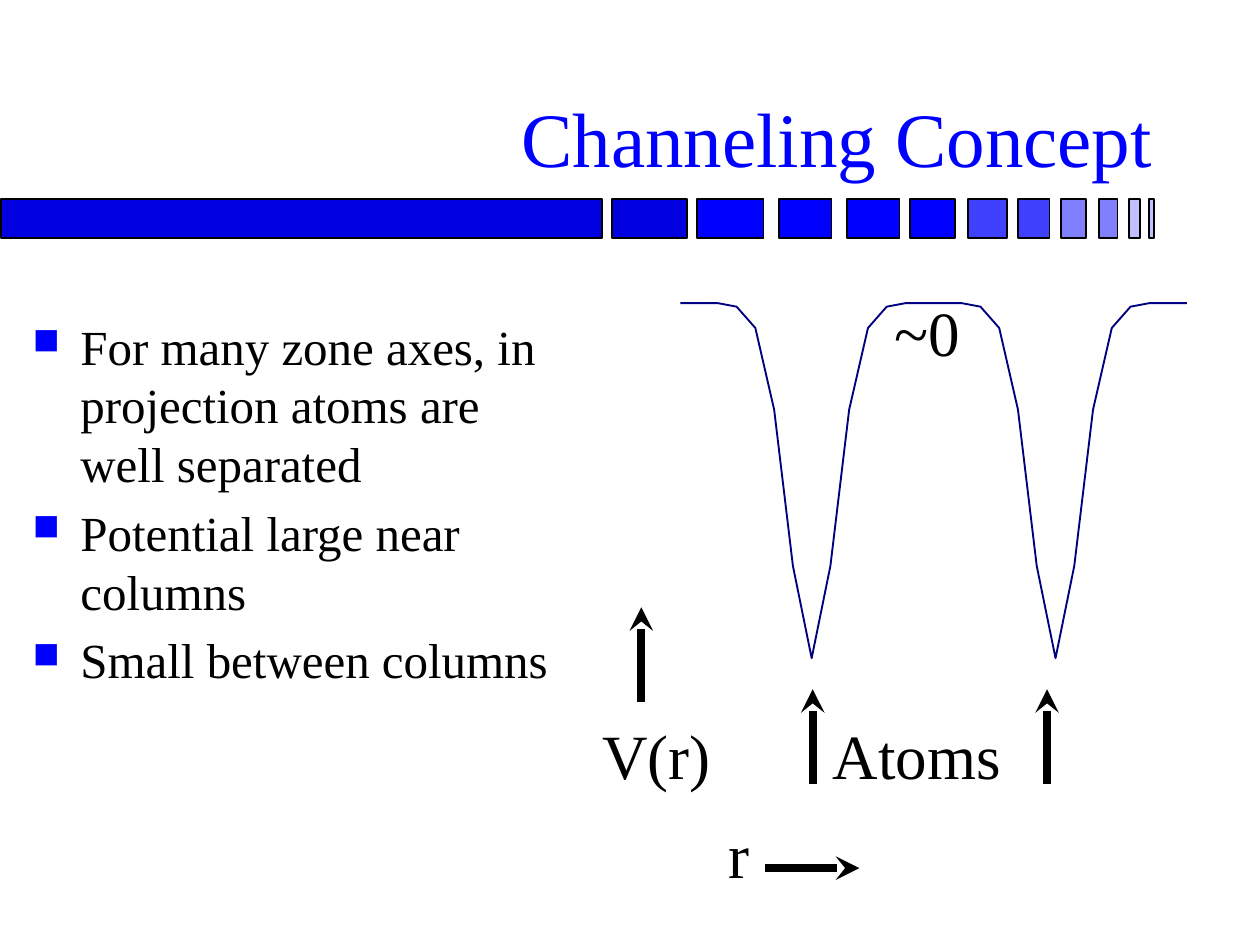
from lxml import etree
from pptx import Presentation
from pptx.chart.data import XyChartData
from pptx.dml.color import RGBColor
from pptx.enum.chart import XL_CHART_TYPE, XL_MARKER_STYLE
from pptx.enum.shapes import MSO_CONNECTOR, MSO_SHAPE
from pptx.enum.text import MSO_ANCHOR, MSO_AUTO_SIZE, PP_ALIGN
from pptx.oxml import parse_xml
from pptx.oxml.ns import nsdecls, qn
from pptx.util import Inches, Pt

SERIF = "Times New Roman"
BLACK, BLUE, NAVY, WHITE = "000000", "0000FF", "000080", "FFFFFF"


def set_color(color_format, color):
    """Fill a solid fill or font colour from a hex string."""
    color_format.rgb = RGBColor.from_string(color)


def set_fill(fill, color):
    fill.solid()
    set_color(fill.fore_color, color)


def add_bullet(paragraph):
    """Give the paragraph a blue square bullet with a hanging indent."""
    properties = paragraph._p.get_or_add_pPr()
    properties.set("marL", str(Inches(0.38)))
    properties.set("indent", str(Inches(-0.38)))
    color = etree.SubElement(properties, qn("a:buClr"))
    etree.SubElement(color, qn("a:srgbClr"), val=BLUE)
    etree.SubElement(properties, qn("a:buSzPct"), val="75000")
    etree.SubElement(properties, qn("a:buChar"), char="■")


def add_tab_stop(paragraph, position):
    tabs = etree.SubElement(paragraph._p.get_or_add_pPr(), qn("a:tabLst"))
    etree.SubElement(tabs, qn("a:tab"), pos=str(Inches(position)), algn="l")


def write_text(frame, text, size=36, color=BLACK, align=PP_ALIGN.LEFT,
               anchor=MSO_ANCHOR.TOP, bullets=False, space=0, tab=None):
    """Write one paragraph for each line of text."""
    frame.word_wrap = True
    frame.auto_size = MSO_AUTO_SIZE.NONE
    frame.vertical_anchor = anchor
    for index, line in enumerate(text.split("\n")):
        paragraph = frame.add_paragraph() if index else frame.paragraphs[0]
        paragraph.alignment = align
        if bullets:
            add_bullet(paragraph)
        if tab:
            add_tab_stop(paragraph, tab)
        if index:
            paragraph.space_before = Pt(space)
        run = paragraph.add_run()
        run.text = line
        run.font.name = SERIF
        run.font.size = Pt(size)
        set_color(run.font.color, color)


def add_text(slide, box, text, **text_format):
    shape = slide.shapes.add_textbox(*map(Inches, box))
    write_text(shape.text_frame, text, **text_format)


def add_title(slide, box, text):
    title = slide.shapes.title
    title.left, title.top, title.width, title.height = map(Inches, box)
    write_text(title.text_frame, text, size=44, color=BLUE,
               align=PP_ALIGN.RIGHT, anchor=MSO_ANCHOR.BOTTOM)


def add_fading_bar(slide, top, height):
    """Draw the row of blocks that shrink and fade to the right."""
    blocks = [
        (0.01, 4.77, "0000E0"), (4.86, 0.59, "0000E0"),
        (5.53, 0.53, BLUE), (6.18, 0.42, BLUE),
        (6.72, 0.42, BLUE), (7.22, 0.36, BLUE),
        (7.68, 0.31, "4040FF"), (8.08, 0.25, "4040FF"),
        (8.42, 0.2, "8080FF"), (8.72, 0.15, "8080FF"),
        (8.96, 0.09, "C0C0FF"), (9.12, 0.04, "C0C0FF"),
    ]
    for left, width, color in blocks:
        box = map(Inches, (left, top, width, height))
        block = slide.shapes.add_shape(MSO_SHAPE.RECTANGLE, *box)
        block.shadow.inherit = False
        set_fill(block.fill, color)
        set_fill(block.line.fill, BLACK)
        block.line.width = Pt(1)


def add_potential_chart(slide, box):
    """Plot two identical potential wells along r."""
    slope = [-1, -7, -30, -74]
    well = slope + [-100] + slope[::-1]
    potential = [0] * 3 + well + [0] * 4 + well + [0] * 3
    data = XyChartData()
    points = data.add_series("Series 1")
    for index, value in enumerate(potential):
        points.add_data_point(round(-1 + index / 10, 1), value)
    chart = slide.shapes.add_chart(
        XL_CHART_TYPE.XY_SCATTER_SMOOTH_NO_MARKERS,
        *map(Inches, box), data).chart

    chart.has_legend = False
    chart.has_title = False
    chart.font.name = "Arial"
    chart.font.size = Pt(12.9)
    set_color(chart.font.color, BLACK)
    chart.plots[0].vary_by_categories = False
    series = chart.plots[0].series[0]
    series.smooth = True
    series.marker.style = XL_MARKER_STYLE.NONE
    set_fill(series.format.line.fill, NAVY)
    series.format.line.width = Pt(1.08)

    # Hidden axes with fixed ranges
    for axis, low, high in ((chart.category_axis, -1.5, 2),
                            (chart.value_axis, -120, 0)):
        axis.minimum_scale, axis.maximum_scale = low, high
        axis.has_major_gridlines = False
        axis.visible = False

    # Plot area position and white background
    plot_area = chart._chartSpace.chart.plotArea
    for layout in plot_area.findall(qn("c:layout")):
        plot_area.remove(layout)
    layout = etree.Element(qn("c:layout"))
    manual = etree.SubElement(layout, qn("c:manualLayout"))
    for tag, value in (("layoutTarget", "inner"), ("xMode", "edge"),
                       ("yMode", "edge"), ("x", "0.023"), ("y", "0.035"),
                       ("w", "0.958"), ("h", "0.937")):
        etree.SubElement(manual, qn(f"c:{tag}"), val=value)
    plot_area.insert(0, layout)
    chart._chartSpace.chart.addnext(parse_xml(
        f'<c:spPr {nsdecls("c", "a")}><a:solidFill><a:srgbClr val="{WHITE}"/>'
        '</a:solidFill><a:ln><a:noFill/></a:ln></c:spPr>'))


def add_arrow(slide, start, end):
    arrow = slide.shapes.add_connector(
        MSO_CONNECTOR.STRAIGHT, *map(Inches, start + end))
    set_fill(arrow.line.fill, BLACK)
    arrow.line.width = Pt(4.5)
    etree.SubElement(arrow.line._get_or_add_ln(), qn("a:tailEnd"),
                     type="stealth")
    etree.SubElement(arrow._element.spPr, qn("a:effectLst"))


def add_potential_figure(slide, box):
    """Place the chart with its labels and arrows in the box."""
    left, top, width, height = box
    add_potential_chart(slide, (left, top, width, height))

    # Labels
    add_text(slide, (left + 0.15, top + 3.36, 4.98, 0.7), "V(r)\tAtoms",
             tab=1.83)
    add_text(slide, (left + 2.47, top, 1.79, 0.7), "~0")
    add_text(slide, (left + 1.15, top + 4.14, 0.97, 0.7), "r")

    # Upward arrows for V(r) and the atoms, then the r direction
    length = 0.75
    for x, y in ((0.56, 3.29), (1.92, 3.94), (3.78, 3.94)):
        add_arrow(slide, (left + x, top + y), (left + x, top + y - length))
    r_left, r_top = left + 1.54, top + 4.61
    add_arrow(slide, (r_left, r_top), (r_left + length, r_top))


def main():
    presentation = Presentation()
    presentation.slide_width = Inches(10)
    presentation.slide_height = Inches(7.5)
    slide = presentation.slides.add_slide(presentation.slide_layouts[5])
    set_fill(slide.background.fill, WHITE)

    add_fading_bar(slide, 1.58, 0.31)
    add_title(slide, (0.75, 0.21, 8.5, 1.29), "Channeling Concept")
    add_text(slide, (0.16, 2.46, 4.41, 4.95),
             "For many zone axes, in projection atoms are well separated\n"
             "Potential large near columns\n"
             "Small between columns",
             size=28, bullets=True, space=5.6)
    add_potential_figure(slide, (4.53, 2.28, 5.44, 3.61))
    presentation.save("out.pptx")


if __name__ == "__main__":
    main()
